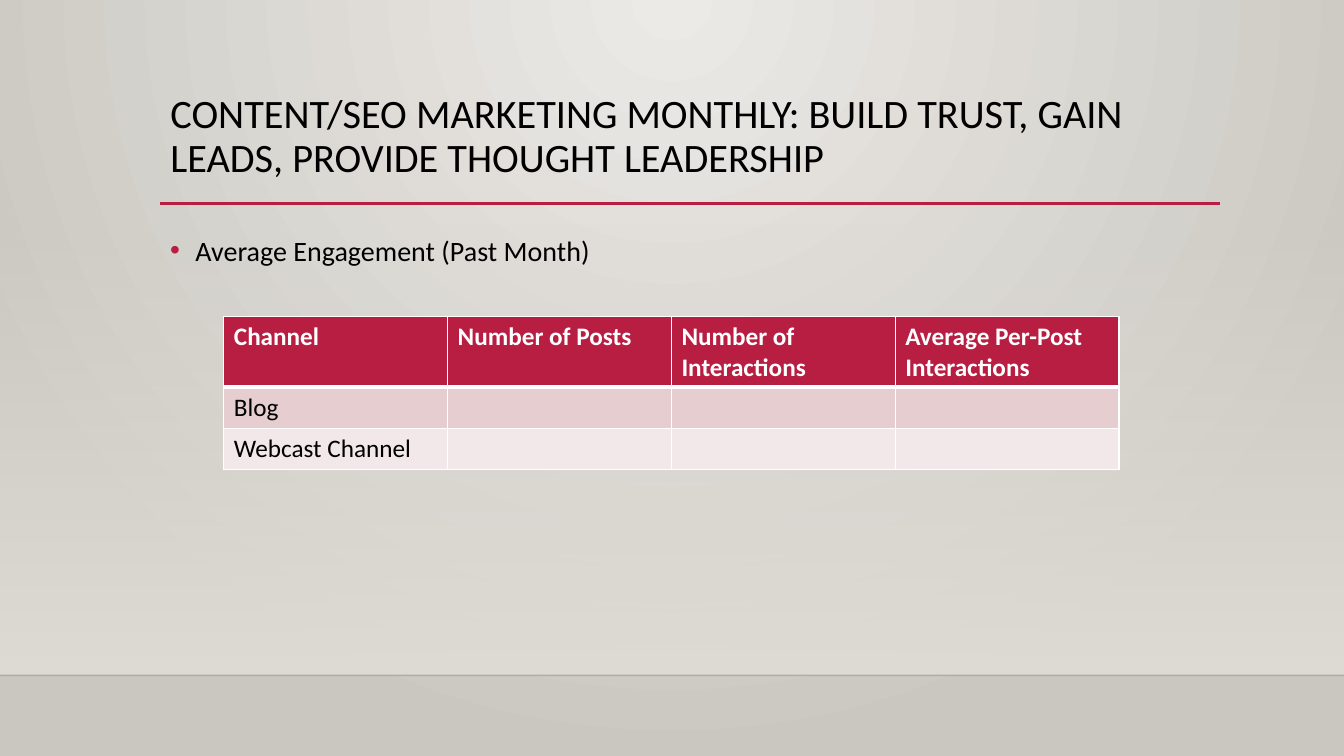
from lxml import etree
from pptx import Presentation
from pptx.dml.color import RGBColor
from pptx.enum import shapes, text
from pptx.oxml import ns
from pptx.util import Inches, Pt

FONT = "Calibri"
BLACK = RGBColor(0x00, 0x00, 0x00)
WHITE = RGBColor(0xFF, 0xFF, 0xFF)
CRIMSON = RGBColor(0xB7, 0x1E, 0x42)
ROSE = RGBColor(0xE6, 0xCD, 0xCF)
PALE_ROSE = RGBColor(0xF3, 0xE8, 0xE9)
GLOW = RGBColor(0xEC, 0xEA, 0xE7)
STONE = RGBColor(0xCA, 0xC7, 0xC1)
SAND = RGBColor(0xDF, 0xDB, 0xD5)

TITLE = "CONTENT/SEO MARKETING MONTHLY: BUILD TRUST, GAIN LEADS, PROVIDE THOUGHT LEADERSHIP"
ROWS = [
    ["Channel", "Number of Posts", "Number of Interactions", "Average Per-Post Interactions"],
    ["Blog", "", "", ""],
    ["Webcast Channel", "", "", ""],
]
ROW_HEIGHTS = [0.7, 0.41, 0.41]
ROW_FILLS = [CRIMSON, ROSE, PALE_ROSE]
COLUMN_WIDTH = 2.22


def add_element(parent, tag, **attributes):
    element = etree.SubElement(parent, ns.qn(tag))
    for name, value in attributes.items():
        element.set(name, str(value))
    return element


def set_alpha(color_parent, percent):
    color = color_parent.find(".//" + ns.qn("a:srgbClr"))
    add_element(color, "a:alpha", val=percent * 1000)


def format_font(paragraph, **values):
    for name, value in {"name": FONT, **values}.items():
        if name == "color":
            paragraph.font.color.rgb = value
        else:
            setattr(paragraph.font, name, value)


def fill_gradient(fill, start, end):
    fill.gradient()
    for stop, color in zip(fill.gradient_stops, (start, end)):
        stop.color.rgb = color


def paint_background(slide):
    """Radial glow from the middle of the top edge."""
    fill_gradient(slide.background.fill, GLOW, STONE)
    gradient = slide.element.find(".//" + ns.qn("a:gradFill"))
    gradient.remove(gradient.find(ns.qn("a:lin")))
    circle = add_element(gradient, "a:path", path="circle")
    add_element(circle, "a:fillToRect", l=43000, t=0, r=43000, b=100000)


def add_fade(slide):
    """Band that fades in from clear to sand above the floor line."""
    band = slide.shapes.add_shape(
        shapes.MSO_SHAPE.RECTANGLE, 0, Inches(2.21), Inches(13.33), Inches(4.49))
    band.shadow.inherit = False
    band.line.fill.background()
    fill_gradient(band.fill, SAND, SAND)
    band.fill.gradient_angle = 270
    set_alpha(band.element.find(".//" + ns.qn("a:gs")), 0)


def add_rule(slide, left, right, top, color, width):
    rule = slide.shapes.add_connector(
        shapes.MSO_CONNECTOR.STRAIGHT, Inches(left), Inches(top), Inches(right), Inches(top))
    rule.line.color.rgb = color
    rule.line.width = Pt(width)
    add_element(rule.element.spPr, "a:effectLst")
    return rule


def set_title(slide):
    title = slide.shapes.title
    title.left, title.top = Inches(1.59), Inches(0.88)
    title.width, title.height = Inches(10.5), Inches(1.15)
    frame = title.text_frame
    frame.text = TITLE
    frame.word_wrap = True
    frame.vertical_anchor = text.MSO_ANCHOR.TOP
    paragraph = frame.paragraphs[0]
    paragraph.alignment = text.PP_ALIGN.LEFT
    paragraph.line_spacing = 0.9
    format_font(paragraph, size=Pt(28.8), color=BLACK)


def add_bullet_text(slide, content):
    box = slide.shapes.add_textbox(Inches(1.59), Inches(2.2), Inches(10.5), Inches(3.77))
    box.text_frame.word_wrap = True
    paragraph = box.text_frame.paragraphs[0]
    paragraph.text = content
    paragraph.line_spacing = 1.2
    properties = paragraph._p.get_or_add_pPr()
    properties.set("marL", str(Inches(0.25)))
    properties.set("indent", str(-Inches(0.25)))
    add_element(add_element(properties, "a:buClr"), "a:srgbClr", val=CRIMSON)
    add_element(properties, "a:buFont", typeface="Arial")
    add_element(properties, "a:buChar", char="•")
    format_font(paragraph, size=Pt(20), color=BLACK)


def set_borders(cell, top, bottom):
    properties = cell._tc.get_or_add_tcPr()
    for side, width in {"L": 1, "R": 1, "T": top, "B": bottom}.items():
        line = add_element(properties, "a:ln" + side, w=Pt(width))
        add_element(add_element(line, "a:solidFill"), "a:srgbClr", val=WHITE)


def add_engagement_table(slide):
    columns = len(ROWS[0])
    table = slide.shapes.add_table(
        len(ROWS), columns, Inches(2.22), Inches(3.14),
        Inches(COLUMN_WIDTH * columns), Inches(sum(ROW_HEIGHTS))).table
    for column in table.columns:
        column.width = Inches(COLUMN_WIDTH)
    for index, row in enumerate(table.rows):
        row.height = Inches(ROW_HEIGHTS[index])
        header = index == 0
        for cell, content in zip(row.cells, ROWS[index]):
            set_borders(cell, top=3 if index == 1 else 1, bottom=3 if header else 1)
            cell.fill.solid()
            cell.fill.fore_color.rgb = ROW_FILLS[index]
            cell.text = content
            format_font(cell.text_frame.paragraphs[0], size=Pt(18), bold=header,
                        color=WHITE if header else BLACK)


def main():
    presentation = Presentation()
    presentation.slide_width = Inches(13.33)
    presentation.slide_height = Inches(7.5)
    slide = presentation.slides.add_slide(presentation.slide_layouts[5])
    paint_background(slide)
    add_fade(slide)
    floor = add_rule(slide, 0, 13.33, 6.7, BLACK, 1)
    set_alpha(floor.element.spPr, 20)
    add_rule(slide, 1.59, 12.1, 2.02, CRIMSON, 2.5)
    set_title(slide)
    add_bullet_text(slide, "Average Engagement (Past Month)")
    add_engagement_table(slide)
    presentation.save("out.pptx")


if __name__ == "__main__":
    main()
